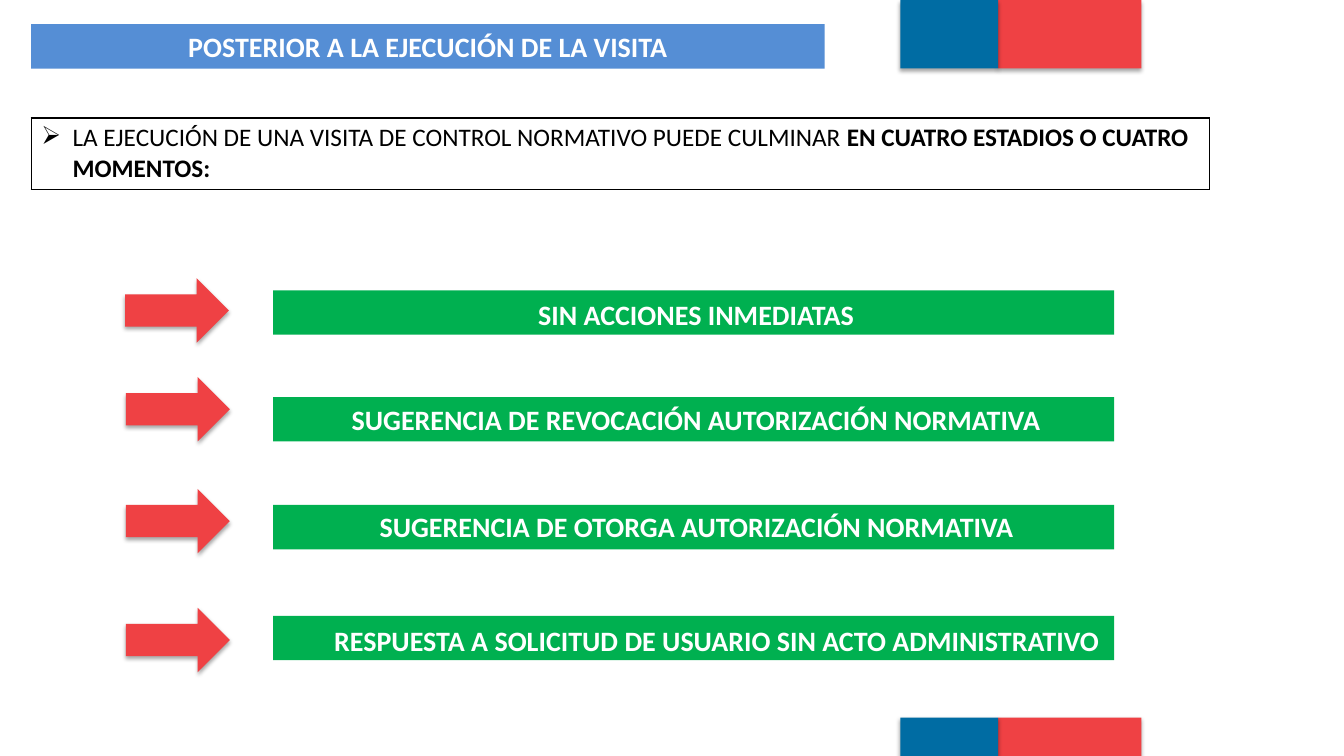
from lxml.etree import SubElement as Sub
from pptx import Presentation
from pptx.dml.color import RGBColor
from pptx.enum.shapes import MSO_SHAPE as Shape
from pptx.enum.text import MSO_ANCHOR as Anchor, PP_ALIGN as Align
from pptx.oxml.ns import qn
from pptx.util import Inches, Pt

RED, BLUE, GREEN, SKY = "EF4144", "006CA3", "00B050", "558ED5"
WHITE, BLACK = "FFFFFF", "000000"

# Label, arrow left and top, bar top, then text left, top and width
STAGES = [
    ("SIN ACCIONES INMEDIATAS", 1.24, 2.76, 2.88, 3.44, 2.9, 6.93),
    ("SUGERENCIA DE REVOCACIÓN AUTORIZACIÓN NORMATIVA",
     1.25, 3.74, 3.94, 3.18, 3.94, 7.45),
    ("SUGERENCIA DE OTORGA AUTORIZACIÓN NORMATIVA",
     1.25, 4.85, 5.01, 3.45, 5.01, 6.92),
    ("RESPUESTA A SOLICITUD DE USUARIO SIN ACTO ADMINISTRATIVO",
     1.25, 6.03, 6.11, 3.18, 6.14, 7.86),
]


def color(code):
    return RGBColor.from_string(code)


def paint(item, code):
    item.fill.solid()
    item.fill.fore_color.rgb = color(code)


def style(run, size, code, bold):
    run.font.name = "Calibri"
    run.font.size = Pt(size)
    run.font.bold = bold
    run.font.color.rgb = color(code)


def box(shapes, kind, place, code, shade=False):
    item = shapes.add_shape(kind, *map(Inches, place))
    paint(item, code)
    item.line.fill.background()
    item.shadow.inherit = False
    if shade:
        effects = item._element.spPr.find(qn("a:effectLst"))
        outer = Sub(effects, qn("a:outerShdw"), blurRad=str(Pt(3.1)),
                    dist=str(Pt(1.8)), dir="5400000", rotWithShape="0")
        tint = Sub(outer, qn("a:srgbClr"), val=BLACK)
        Sub(tint, qn("a:alpha"), val="35000")


def write(frame, text):
    frame.word_wrap = True
    frame.text = text
    line = frame.paragraphs[0]
    line.alignment = Align.CENTER
    style(line.runs[0], 20, WHITE, True)


def head(slide, text):
    title = slide.shapes.title
    title.left, title.top = Inches(0.31), Inches(0.24)
    title.width, title.height = Inches(7.87), Inches(0.44)
    paint(title, SKY)
    write(title.text_frame, text)
    title.text_frame.vertical_anchor = Anchor.MIDDLE


def band(slide, top, high):
    group = slide.shapes.add_group_shape()
    box(group.shapes, Shape.RECTANGLE, (9.9, top, 1.42, high), RED, True)
    box(group.shapes, Shape.RECTANGLE, (8.93, top, 0.97, high), BLUE, True)


def intro(slide, plain, strong):
    place = map(Inches, (0.31, 1.17, 11.69, 0.7))
    table = slide.shapes.add_table(1, 1, *place).table
    table.first_row = table.horz_banding = False
    cell = table.cell(0, 0)
    # Borders precede the fill in the cell properties
    props = cell._tc.get_or_add_tcPr()
    for side in ("lnL", "lnR", "lnT", "lnB"):
        edge = Sub(props, qn("a:" + side), w=str(Pt(1)))
        Sub(Sub(edge, qn("a:solidFill")), qn("a:srgbClr"), val=BLACK)
    cell.fill.background()
    line = cell.text_frame.paragraphs[0]
    for text, bold in ((plain, False), (strong, True)):
        run = line.add_run()
        run.text = text
        style(run, 18, BLACK, bold)
    # Arrow bullet with a hanging indent
    props = line._p.get_or_add_pPr()
    props.set("marL", str(Inches(0.31)))
    props.set("indent", str(Inches(-0.31)))
    Sub(props, qn("a:buChar"), char="➢")


def stage(slide, text, left, top, bar, start, base, wide):
    shapes = slide.shapes
    box(shapes, Shape.RECTANGLE, (2.71, bar, 8.34, 0.44), GREEN)
    box(shapes, Shape.RIGHT_ARROW, (left, top, 1.03, 0.64), RED, True)
    label = shapes.add_textbox(*map(Inches, (start, base, wide, 0.44)))
    write(label.text_frame, text)


def main():
    deck = Presentation()
    deck.slide_width, deck.slide_height = Inches(13.33), Inches(7.5)
    slide = deck.slides.add_slide(deck.slide_layouts[5])

    # Heading and colour bands
    head(slide, "POSTERIOR A LA EJECUCIÓN DE LA VISITA")
    band(slide, 0, 0.68)
    band(slide, 7.12, 0.38)

    # Introduction and the four outcomes
    intro(slide,
          "LA EJECUCIÓN DE UNA VISITA DE CONTROL NORMATIVO PUEDE CULMINAR ",
          "EN CUATRO ESTADIOS O CUATRO MOMENTOS:")
    for row in STAGES:
        stage(slide, *row)

    deck.save("out.pptx")


if __name__ == "__main__":
    main()
